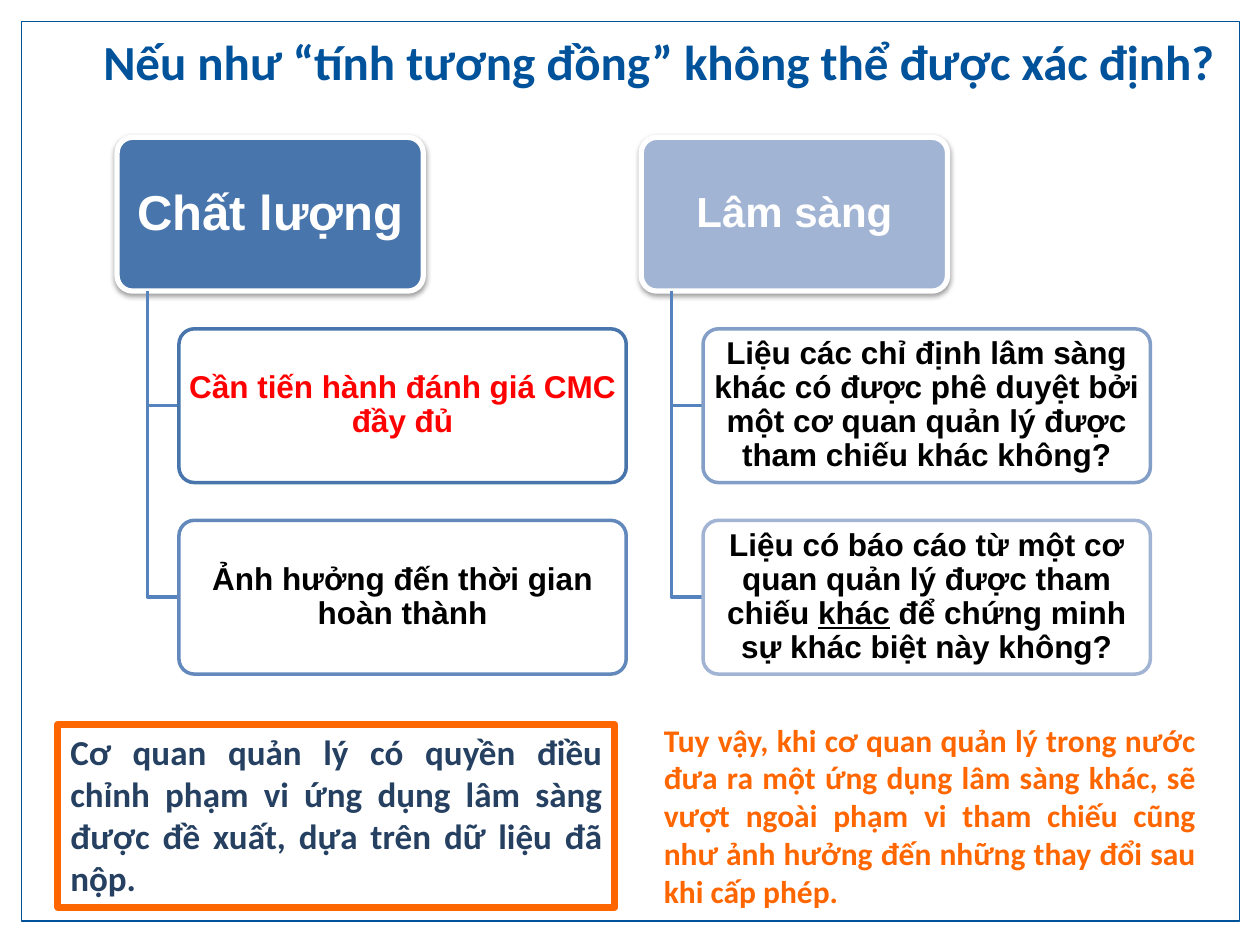
from dataclasses import dataclass

from lxml.etree import SubElement
from pptx import Presentation
from pptx.dml.color import RGBColor
from pptx.enum.shapes import MSO_SHAPE
from pptx.enum.text import MSO_ANCHOR, PP_ALIGN
from pptx.oxml.ns import qn
from pptx.util import Inches, Pt


@dataclass(frozen=True)
class Theme:
    heading_font: str = "Calibri"
    diagram_font: str = "Arial"
    blue: str = "00529B"
    navy: str = "254061"
    orange: str = "FF6600"
    red: str = "FF0000"
    black: str = "000000"
    white: str = "FFFFFF"
    branch: str = "5483BE"
    title_size: int = 28
    note_size: int = 20
    body_size: int = 18


theme = Theme()


def write(shape, text, font, size, color, align, margins, anchor=MSO_ANCHOR.TOP):
    frame = shape.text_frame
    frame.word_wrap = True
    frame.vertical_anchor = anchor
    frame.margin_left = frame.margin_right = Inches(margins[0])
    frame.margin_top = frame.margin_bottom = Inches(margins[1])
    para = frame.paragraphs[0]
    para.alignment = align
    para.font.name = font
    para.font.size = Pt(size)
    para.font.bold = True
    para.font.color.rgb = RGBColor.from_string(color)
    for index, piece in enumerate(text.split("|")):
        span = para.add_run()
        span.text = piece
        if index % 2:
            span.font.underline = True
    return para


def add_panel(kind, left, top, width, height, line, weight, fill=None):
    panel = page.shapes.add_shape(
        kind, Inches(left), Inches(top), Inches(width), Inches(height)
    )
    panel.shadow.inherit = False
    panel.line.color.rgb = RGBColor.from_string(line)
    panel.line.width = Pt(weight)
    if fill:
        panel.fill.solid()
        panel.fill.fore_color.rgb = RGBColor.from_string(fill)
    else:
        panel.fill.background()
    if kind == MSO_SHAPE.ROUNDED_RECTANGLE:
        panel.adjustments[0] = 0.1
    return panel


deck = Presentation()
deck.slide_width, deck.slide_height = Inches(10), Inches(7.5)
page = deck.slides.add_slide(deck.slide_layouts[6])

add_panel(MSO_SHAPE.RECTANGLE, 0.17, 0.17, 9.67, 7.14, theme.blue, 0.75)

title = page.shapes.add_textbox(Inches(0.82), Inches(0.25), Inches(9.1), Inches(0.47))
write(title, "Nếu như “tính tương đồng” không thể được xác định?",
      theme.heading_font, theme.title_size, theme.blue, PP_ALIGN.LEFT, (0, 0))

grid_left, column_step = 0.93, 4.16
grid_top, row_step, row_height = 1.09, 1.52, 1.22
head_width, card_width = 2.43, 3.55
trunk_indent, card_indent = 0.24, 0.49

branches = [
    ("Chất lượng", 28, "4875AC", [
        ("Cần tiến hành đánh giá CMC đầy đủ", theme.red, "4875AC"),
        ("Ảnh hưởng đến thời gian hoàn thành", theme.black, "6389BC"),
    ]),
    ("Lâm sàng", 24, "A2B4D4", [
        ("Liệu các chỉ định lâm sàng khác có được phê duyệt bởi một cơ quan "
         "quản lý được tham chiếu khác không?", theme.black, "839EC7"),
        ("Liệu có báo cáo từ một cơ quan quản lý được tham chiếu |khác| để "
         "chứng minh sự khác biệt này không?", theme.black, "A2B4D4"),
    ]),
]

for column, (heading, heading_size, heading_fill, cards) in enumerate(branches):
    left = grid_left + column * column_step
    head = add_panel(MSO_SHAPE.ROUNDED_RECTANGLE, left, grid_top, head_width,
                     row_height, theme.white, 3, heading_fill)
    effects = head.element.spPr.find(qn("a:effectLst"))
    shadow = SubElement(effects, qn("a:outerShdw"), blurRad="40000", dist="20000",
                        dir="5400000", rotWithShape="0")
    shade = SubElement(shadow, qn("a:srgbClr"), val=theme.black)
    SubElement(shade, qn("a:alpha"), val="38000")
    para = write(head, heading, theme.diagram_font, heading_size, theme.white,
                 PP_ALIGN.CENTER, (0.06, 0.04), MSO_ANCHOR.MIDDLE)
    para.line_spacing = 0.9

    for row, (text, color, outline) in enumerate(cards, start=1):
        top = grid_top + row * row_step
        trunk = Inches(left + trunk_indent)
        middle = Inches(top + row_height / 2)
        builder = page.shapes.build_freeform(trunk, Inches(grid_top + row_height))
        builder.add_line_segments(
            [(trunk, middle), (Inches(left + card_indent), middle)], close=False
        )
        elbow = builder.convert_to_shape()
        elbow.shadow.inherit = False
        elbow.fill.background()
        elbow.line.color.rgb = RGBColor.from_string(theme.branch)
        elbow.line.width = Pt(2)

        card = add_panel(MSO_SHAPE.ROUNDED_RECTANGLE, left + card_indent, top,
                         card_width, row_height, outline, 2, theme.white)
        opacity = card.fill.fore_color
        tint = card.element.spPr.find(qn("a:solidFill")).find(qn("a:srgbClr"))
        SubElement(tint, qn("a:alpha"), val="90000")
        para = write(card, text, theme.diagram_font, theme.body_size, color,
                     PP_ALIGN.CENTER, (0.04, 0.03), MSO_ANCHOR.MIDDLE)
        para.line_spacing = 0.9

note = add_panel(MSO_SHAPE.RECTANGLE, 0.46, 5.75, 4.42, 1.45, theme.orange, 4)
write(note, "Cơ quan quản lý có quyền điều chỉnh phạm vi ứng dụng lâm sàng được "
      "đề xuất, dựa trên dữ liệu đã nộp.", theme.heading_font, theme.note_size,
      theme.navy, PP_ALIGN.JUSTIFY, (0.1, 0.05))

caution = page.shapes.add_textbox(Inches(5.17), Inches(5.67), Inches(4.42), Inches(1.62))
write(caution, "Tuy vậy, khi cơ quan quản lý trong nước đưa ra một ứng dụng lâm sàng "
      "khác, sẽ vượt ngoài phạm vi tham chiếu cũng như ảnh hưởng đến những thay đổi "
      "sau khi cấp phép.", theme.heading_font, theme.body_size, theme.orange,
      PP_ALIGN.JUSTIFY, (0.1, 0.05))

deck.save("out.pptx")
